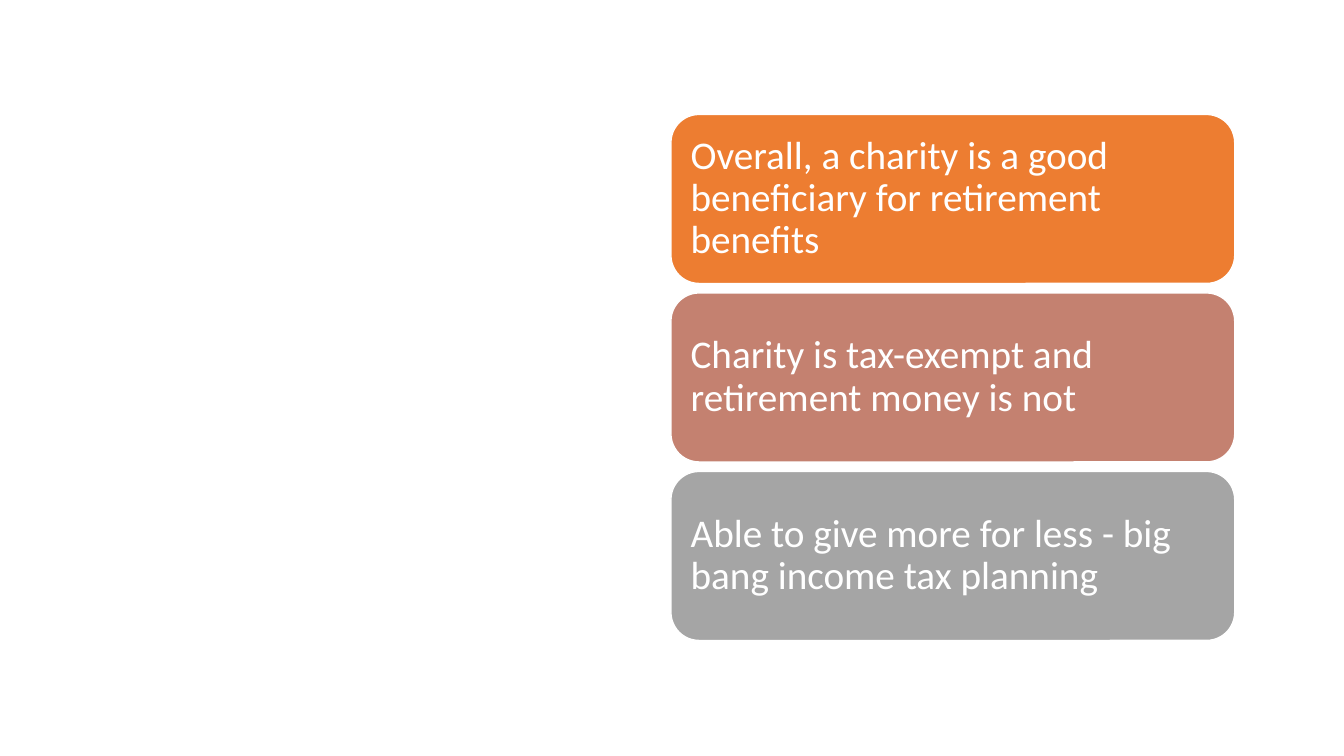
from pptx import Presentation
from pptx import util as u
from pptx.dml.color import RGBColor
from pptx.enum import shapes, text

PX = 9525  # EMU per px, 96 px to the inch
COLORS = {"orange": "ED7D31", "clay": "C48170", "gray": "A5A5A5", "white": "FFFFFF"}
POINTS = [
    ("Overall, a charity is a good beneficiary for retirement benefits", "orange"),
    ("Charity is tax-exempt and retirement money is not", "clay"),
    ("Able to give more for less - big bang income tax planning", "gray"),
]


def px(length):
    return u.Emu(length * PX)


def color(name):
    return RGBColor.from_string(COLORS[name])


def add_card(parent, left, top, width, height, wording, fill):
    card = parent.shapes.add_shape(
        shapes.MSO_SHAPE.ROUNDED_RECTANGLE, px(left), px(top), px(width), px(height)
    )
    card.shadow.inherit = False
    card.fill.solid()
    card.fill.fore_color.rgb = color(fill)
    card.line.color.rgb = color("white")
    card.line.width = u.Pt(1)

    frame = card.text_frame
    frame.word_wrap = True
    frame.vertical_anchor = text.MSO_ANCHOR.MIDDLE
    frame.margin_left = frame.margin_right = px(11)
    frame.margin_top = frame.margin_bottom = px(11)
    para = frame.paragraphs[0]
    para.text = wording
    para.alignment = text.PP_ALIGN.LEFT
    para.line_spacing = 0.9
    para.font.name = "Calibri"
    para.font.size = u.Pt(28)
    para.font.color.rgb = color("white")


def add_card_stack(page, left, top, width, height, gap=9):
    """Share the height equally among the points, with a gap between cards."""
    group = page.shapes.add_group_shape()
    card_height = (height - gap * (len(POINTS) - 1)) // len(POINTS)
    for index, (wording, fill) in enumerate(POINTS):
        card_top = top + index * (card_height + gap)
        add_card(group, left, card_top, width, card_height, wording, fill)


def main():
    deck = Presentation()
    deck.slide_width, deck.slide_height = px(1280), px(720)
    page = deck.slides.add_slide(deck.slide_layouts[6])
    add_card_stack(page, left=639, top=109, width=537, height=501)
    deck.save("out.pptx")


if __name__ == "__main__":
    main()
